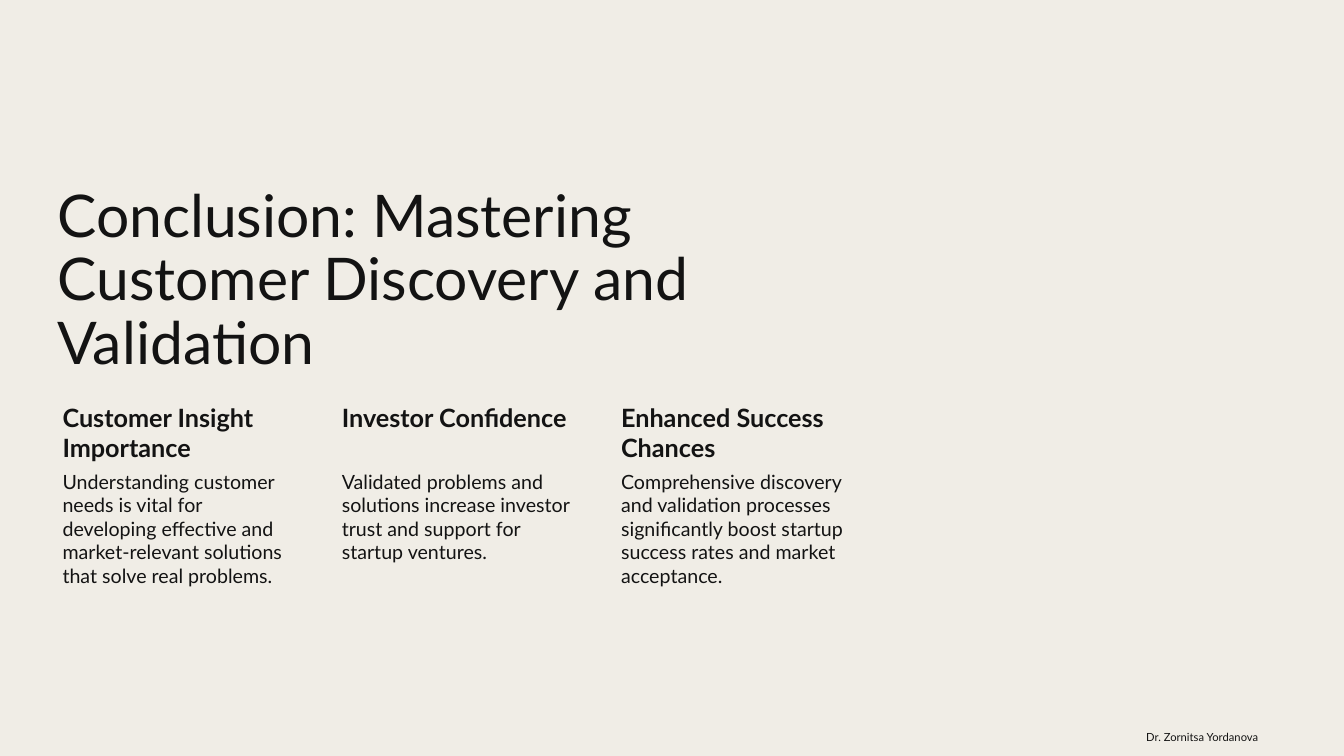
from pptx import Presentation
from pptx import util as u
from pptx.dml.color import RGBColor
from pptx.enum import text

PAPER = RGBColor(0xF0, 0xED, 0xE6)
INK = RGBColor(0x13, 0x13, 0x13)

# Column grid, in inches
LEFT, STEP, WIDE = 0.47, 2.77, 2.52
HEAD_TOP, HEAD_TALL, BODY_TALL = 3.96, 0.68, 1.76

POINTS = [
    ("Customer Insight Importance",
     "Understanding customer needs is vital for developing effective and "
     "market-relevant solutions that solve real problems."),
    ("Investor Confidence",
     "Validated problems and solutions increase investor trust and support "
     "for startup ventures."),
    ("Enhanced Success Chances",
     "Comprehensive discovery and validation processes significantly boost "
     "startup success rates and market acceptance."),
]


def write(shape, words, size, bold=False, anchor=text.MSO_ANCHOR.TOP,
          align=text.PP_ALIGN.LEFT):
    frame = shape.text_frame
    frame.text = words
    frame.word_wrap = True
    frame.auto_size = text.MSO_AUTO_SIZE.NONE
    frame.vertical_anchor = anchor
    para = frame.paragraphs[0]
    para.alignment = align
    para.font.name = "Lato"
    para.font.size = u.Pt(size)
    para.font.bold = bold
    para.font.color.rgb = INK
    return frame


def add_box(left, top, width, height):
    return slide.shapes.add_textbox(*map(u.Inches, (left, top, width, height)))


deck = Presentation()
deck.slide_width, deck.slide_height = u.Inches(13.33), u.Inches(7.5)
slide = deck.slides.add_slide(deck.slide_layouts[5])
slide.background.fill.solid()
slide.background.fill.fore_color.rgb = PAPER

# Title
title = slide.shapes.title
title.left, title.top = u.Inches(LEFT), u.Inches(1.78)
title.width, title.height = u.Inches(2 * STEP + WIDE), u.Inches(2.01)
frame = write(title, "Conclusion: Mastering Customer Discovery and Validation",
              42, anchor=text.MSO_ANCHOR.BOTTOM)
frame.paragraphs[0].line_spacing = 0.9

# Three columns, each a heading over its text
for col, (head, body) in enumerate(POINTS):
    left = LEFT + col * STEP
    rows = [(head, HEAD_TOP, HEAD_TALL, 18, True, 0.03),
            (body, HEAD_TOP + HEAD_TALL, BODY_TALL, 14, False, 0.02)]
    for words, top, tall, size, bold, inset in rows:
        frame = write(add_box(left, top, WIDE, tall), words, size, bold)
        frame.margin_left = u.Inches(0.15)
        frame.margin_top = frame.margin_right = frame.margin_bottom = u.Inches(inset)

# Footer
write(add_box(9.69, 7.13, 2.89, 0.37), "Dr. Zornitsa Yordanova", 8,
      anchor=text.MSO_ANCHOR.MIDDLE, align=text.PP_ALIGN.RIGHT)

deck.save("out.pptx")
